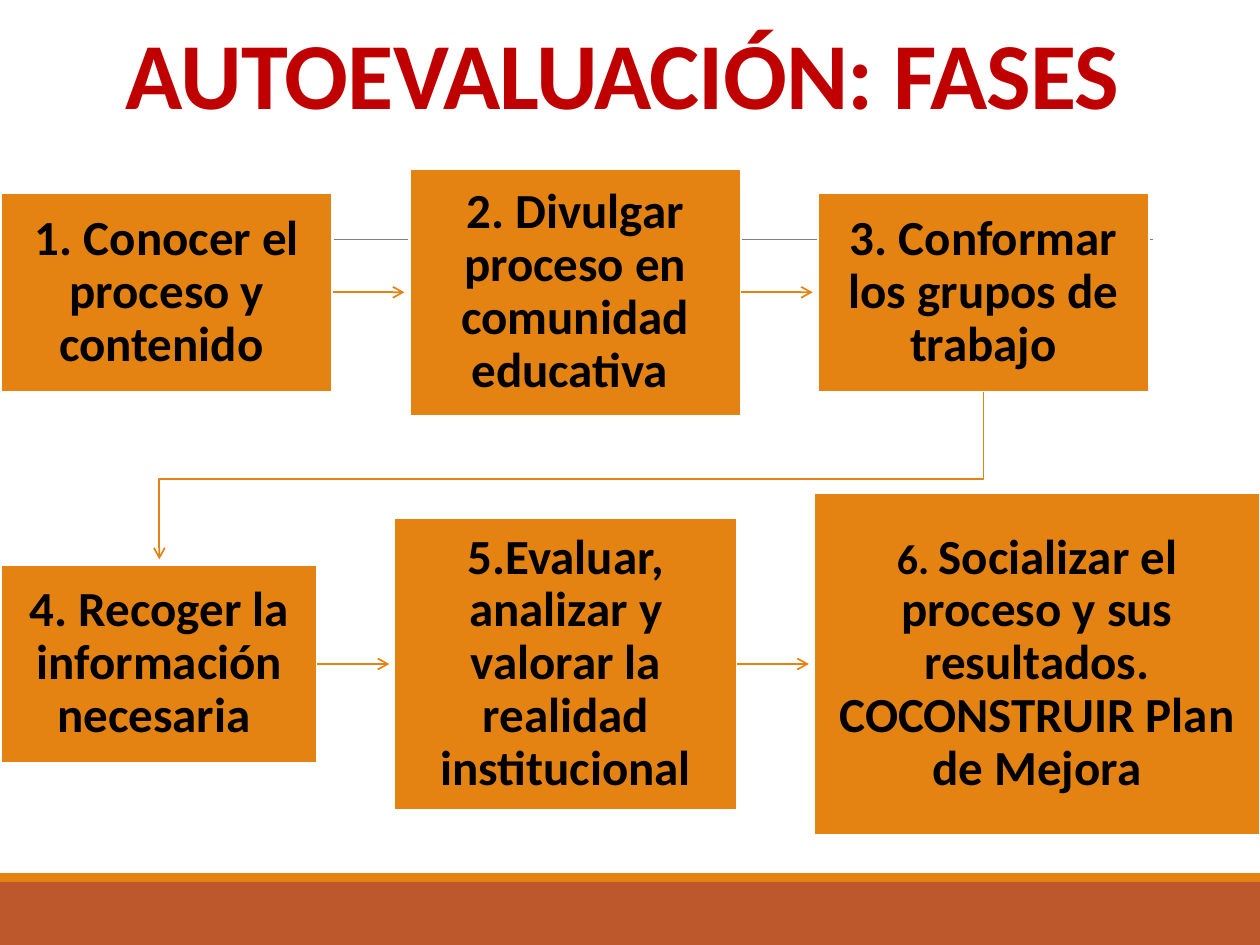
from dataclasses import dataclass
from lxml.etree import SubElement
from pptx import Presentation
from pptx.dml.color import RGBColor
from pptx.enum.shapes import MSO_CONNECTOR, MSO_SHAPE
from pptx.enum.text import MSO_ANCHOR, PP_ALIGN
from pptx.oxml.ns import qn
from pptx.util import Inches, Pt

TITLE = "AUTOEVALUACIÓN: FASES"
ROWS = [
    (2.32, [
        (2.63, 1.58, 0.22, [("1. Conocer el proceso y contenido ", 28)]),
        (2.63, 1.96, 0.22, [("2. Divulgar proceso en comunidad educativa ", 28)]),
        (2.63, 1.58, 0.22, [("3. Conformar los grupos de trabajo", 28)]),
    ]),
    (5.27, [
        (2.51, 1.58, 0.22, [("4. Recoger la información necesaria ", 28)]),
        (2.72, 2.32, 0.22, [("5.Evaluar, analizar y valorar la realidad institucional", 28)]),
        (3.54, 2.72, 0.19, [
            ("6. ", 24),
            ("Socializar el proceso y sus resultados. COCONSTRUIR Plan de Mejora", 28),
        ]),
    ]),
]
LEFT, GAP, TIP_GAP, BEND_Y = 0.01, 0.61, 0.04, 3.8


@dataclass(frozen=True)
class Theme:
    font: str = "Calibri"
    title_size: float = 54
    title: str = "C00000"
    text: str = "000000"
    orange: str = "E48312"
    rust: str = "BD582C"
    rule: str = "808080"
    white: str = "FFFFFF"


theme = Theme()


def rgb(color):
    return RGBColor.from_string(color)


def write(shape, runs, color=theme.text, align=PP_ALIGN.CENTER, anchor=MSO_ANCHOR.MIDDLE,
          spacing=0.9, inset=(0.1, 0.05), tracking=0):
    tf = shape.text_frame
    tf.word_wrap = True
    tf.vertical_anchor = anchor
    tf.margin_left = tf.margin_right = Inches(inset[0])
    tf.margin_top = tf.margin_bottom = Inches(inset[1])
    p = tf.paragraphs[0]
    p.alignment = align
    p.line_spacing = spacing
    for text, size in runs:
        r = p.add_run()
        r.text = text
        r.font.name, r.font.size, r.font.bold = theme.font, Pt(size), True
        r.font.color.rgb = rgb(color)
        if tracking:
            r.font._element.set("spc", str(tracking))


def add_box(s, x, y, w, h, fill, outline=None):
    sp = s.shapes.add_shape(MSO_SHAPE.RECTANGLE, Inches(x), Inches(y), Inches(w), Inches(h))
    sp.shadow.inherit = False
    sp.fill.solid()
    sp.fill.fore_color.rgb = rgb(fill)
    if outline:
        sp.line.color.rgb = rgb(outline)
        sp.line.width = Pt(1.25)
    else:
        sp.line.fill.background()
    return sp


def style_line(line, color, width, arrow=False):
    line.color.rgb = rgb(color)
    line.width = Pt(width)
    if arrow:
        SubElement(line._get_or_add_ln(), qn("a:tailEnd"), type="arrow")


def add_line(s, x1, y1, x2, y2, color, width, arrow=False):
    c = s.shapes.add_connector(MSO_CONNECTOR.STRAIGHT, Inches(x1), Inches(y1), Inches(x2), Inches(y2))
    style_line(c.line, color, width, arrow)
    SubElement(c._element.spPr, qn("a:effectLst"))
    return c


def add_row(s, mid_y, phases):
    x, boxes = LEFT, []
    for i, (w, h, inset, runs) in enumerate(phases):
        box = add_box(s, x, mid_y - h / 2, w, h, theme.orange, theme.white)
        write(box, runs, inset=(inset, inset))
        boxes.append(box)
        if i < len(phases) - 1:
            arrow = add_line(s, x + w, mid_y, x + w + GAP - TIP_GAP, mid_y, theme.orange, 1, True)
            arrow.begin_connect(box, 3)
        x += w + GAP
    return boxes


def add_row_turn(s, start, end):
    x1, x2 = start.left + start.width // 2, end.left + end.width // 2
    bend = Inches(BEND_Y)
    fb = s.shapes.build_freeform(x1, start.top + start.height)
    fb.add_line_segments([(x1, bend), (x2, bend), (x2, end.top - Inches(TIP_GAP))], close=False)
    sp = fb.convert_to_shape()
    sp.shadow.inherit = False
    sp.fill.background()
    style_line(sp.line, theme.orange, 1, True)


def main():
    prs = Presentation()
    prs.slide_width, prs.slide_height = Inches(10), Inches(7.5)
    s = prs.slides.add_slide(prs.slide_layouts[6])
    add_box(s, 0, 7, 10, 0.5, theme.rust)
    add_box(s, 0, 6.93, 10, 0.07, theme.orange)
    add_line(s, 0.98, 1.9, 9.15, 1.9, theme.rule, 0.5)
    title = s.shapes.add_textbox(Inches(0.9), Inches(0.31), Inches(8.59), Inches(0.76))
    write(title, [(TITLE, theme.title_size)], color=theme.title, align=PP_ALIGN.LEFT,
          anchor=MSO_ANCHOR.BOTTOM, spacing=0.85, tracking=-50)
    top, bottom = [add_row(s, mid_y, phases) for mid_y, phases in ROWS]
    add_row_turn(s, top[-1], bottom[0])
    prs.save("out.pptx")


if __name__ == "__main__":
    main()
